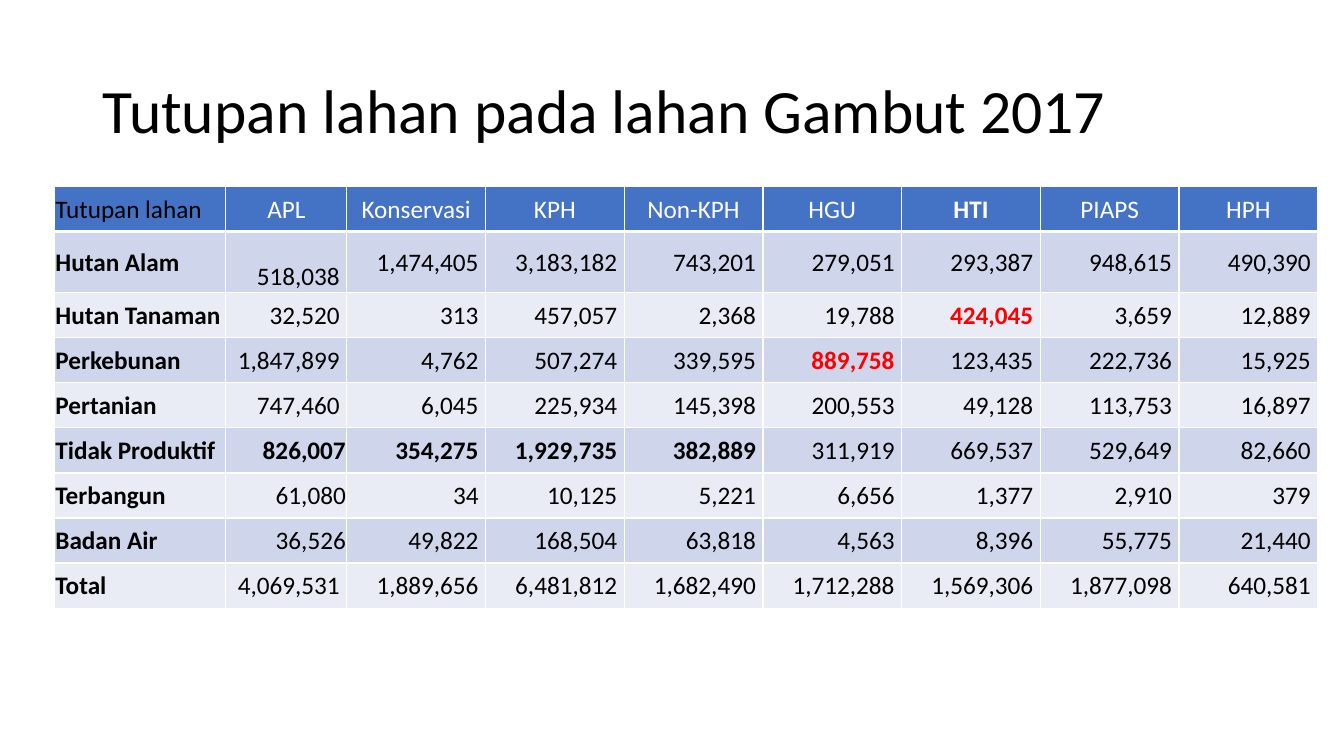
from lxml.etree import SubElement
from pptx import Presentation
from pptx.dml.color import RGBColor
from pptx.enum.text import MSO_ANCHOR as ANCHOR, MSO_AUTO_SIZE as AUTO, PP_ALIGN as ALIGN
from pptx.oxml.ns import qn
from pptx.util import Inches, Pt

TITLE = "Tutupan lahan pada lahan Gambut 2017"
HEADER = ["Tutupan lahan", "APL", "Konservasi", "KPH", "Non-KPH", "HGU", "HTI", "PIAPS", "HPH"]
ROWS = [
    ["Hutan Alam", "518,038", "1,474,405", "3,183,182", "743,201", "279,051", "293,387", "948,615", "490,390"],
    ["Hutan Tanaman", "32,520", "313", "457,057", "2,368", "19,788", "424,045", "3,659", "12,889"],
    ["Perkebunan", "1,847,899", "4,762", "507,274", "339,595", "889,758", "123,435", "222,736", "15,925"],
    ["Pertanian", "747,460", "6,045", "225,934", "145,398", "200,553", "49,128", "113,753", "16,897"],
    ["Tidak Produktif", "826,007", "354,275", "1,929,735", "382,889", "311,919", "669,537", "529,649", "82,660"],
    ["Terbangun", "61,080", "34", "10,125", "5,221", "6,656", "1,377", "2,910", "379"],
    ["Badan Air", "36,526", "49,822", "168,504", "63,818", "4,563", "8,396", "55,775", "21,440"],
    ["Total", "4,069,531", "1,889,656", "6,481,812", "1,682,490", "1,712,288", "1,569,306", "1,877,098", "640,581"],
]
BOLD = {"HTI", "826,007", "354,275", "1,929,735", "382,889"}
RED = {"424,045", "889,758"}
FLUSH = {"826,007", "61,080", "36,526"}
LOWERED = "518,038"

LEFT, TOP, WIDTH, HEIGHT = 0.54, 1.85, 12.53, 4.18
LABEL_W, APL_W, TALL_H = 1.7, 1.2, 0.6
BLACK, WHITE, BLUE = "000000", "FFFFFF", "4472C4"
BANDS = ["CFD5EA", "E9EBF5"]


def rgb(value):
    return RGBColor.from_string(value)


def write(tf, text, size=18, color=BLACK, bold=False, align=ALIGN.LEFT, spacing=None):
    p = tf.paragraphs[0]
    p.alignment = align
    p.line_spacing = spacing
    r = p.add_run()
    r.text = text
    r.font.name = "Calibri"
    r.font.size = Pt(size)
    r.font.bold = bold
    r.font.color.rgb = rgb(color)


def add_border(cell, side, width):
    ln = SubElement(cell._tc.get_or_add_tcPr(), qn(f"a:ln{side}"), w=str(Pt(width)))
    fill = SubElement(ln, qn("a:solidFill"))
    SubElement(fill, qn("a:srgbClr"), val=WHITE)


def style_cell(cell, row, fill):
    for side in "LRTB":
        heavy = (row, side) in {(0, "B"), (1, "T")}
        add_border(cell, side, 3 if heavy else 1)
    cell.fill.solid()
    cell.fill.fore_color.rgb = rgb(fill)
    cell.vertical_anchor = ANCHOR.MIDDLE
    cell.margin_left = cell.margin_right = cell.margin_top = Inches(0.01)
    cell.margin_bottom = 0


def fill_cell(cell, row, col, text):
    style_cell(cell, row, BANDS[(row - 1) % 2] if row else BLUE)
    align = ALIGN.LEFT if col == 0 else ALIGN.RIGHT if row else ALIGN.CENTER
    color = RED_TEXT if text in RED else WHITE if row == 0 and col else BLACK
    bold = text in BOLD | RED or (row > 0 and col == 0)
    if align == ALIGN.RIGHT and text not in FLUSH:
        cell.margin_right = Inches(0.07)
    if text == LOWERED:
        cell.margin_top = Inches(0.3)
    write(cell.text_frame, text, color=color, bold=bold, align=align)


RED_TEXT = "FF0000"


def main():
    prs = Presentation()
    prs.slide_width, prs.slide_height = Inches(13.33), Inches(7.5)
    s = prs.slides.add_slide(prs.slide_layouts[5])

    title = s.shapes.title
    title.left, title.top = Inches(0.92), Inches(0.4)
    title.width, title.height = Inches(11.5), Inches(1.45)
    tf = title.text_frame
    tf.word_wrap = True
    tf.auto_size = AUTO.NONE
    tf.vertical_anchor = ANCHOR.MIDDLE
    write(tf, TITLE, size=44, spacing=0.9)

    data = [HEADER] + ROWS
    table = s.shapes.add_table(len(data), len(HEADER), Inches(LEFT), Inches(TOP),
                               Inches(WIDTH), Inches(HEIGHT)).table
    value_w = (WIDTH - LABEL_W - APL_W) / (len(HEADER) - 2)
    row_h = (HEIGHT - TALL_H) / (len(data) - 1)
    for col, column in enumerate(table.columns):
        column.width = Inches({0: LABEL_W, 1: APL_W}.get(col, value_w))
    for row, values in enumerate(data):
        table.rows[row].height = Inches(TALL_H if row == 1 else row_h)
        for col, text in enumerate(values):
            fill_cell(table.cell(row, col), row, col, text)

    prs.save("out.pptx")


if __name__ == "__main__":
    main()
